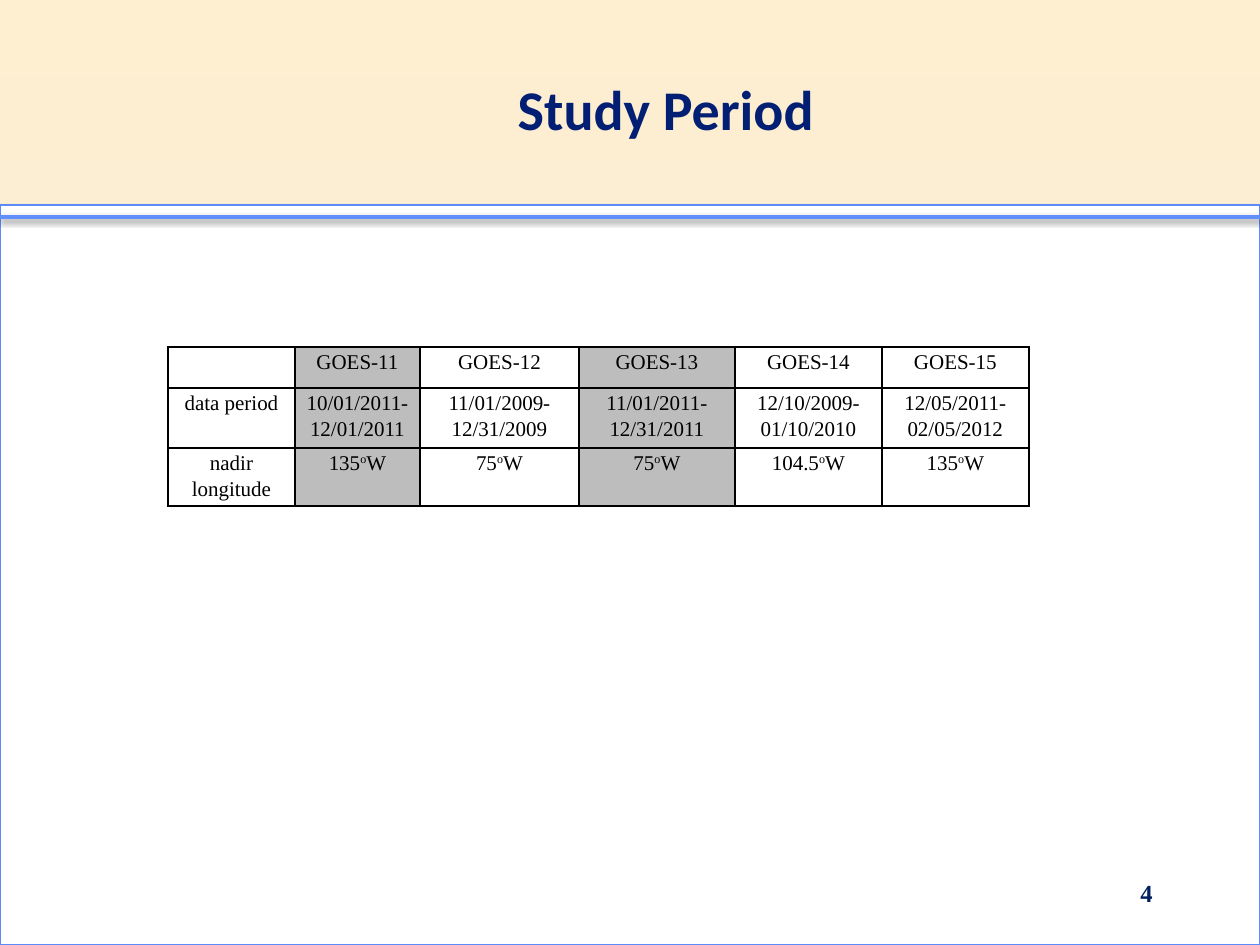
from copy import deepcopy

from lxml.etree import SubElement
from pptx import Presentation
from pptx.dml.color import RGBColor
from pptx.enum.shapes import MSO_CONNECTOR, MSO_SHAPE
from pptx.enum.text import MSO_ANCHOR as ANCHOR, PP_ALIGN as ALIGN
from pptx.oxml import parse_xml
from pptx.oxml.ns import nsdecls, qn
from pptx.util import Pt

PX = 914400 / 126
SERIF = "Times New Roman"
BACKGROUND = [(0, "FFEFD1"), (0.65, "F0EBD5"), (1, "D1C39F")]

# "^" marks the raised degree sign
ROWS = [
    ["", "GOES-11", "GOES-12", "GOES-13", "GOES-14", "GOES-15"],
    ["data period", "10/01/2011-12/01/2011", "11/01/2009-12/31/2009",
     "11/01/2011-12/31/2011", "12/10/2009- 01/10/2010",
     "12/05/2011-02/05/2012"],
    ["nadir longitude", "135^W", "75^W", "75^W", "104.5^W", "135^W"],
]
COL_WIDTHS = [127, 125, 159, 156, 147, 147]
ROW_HEIGHTS = [41, 60, 51]
SHADED_COLS = (1, 3)


def px(n):
    return round(n * PX)


def rgb(value):
    return RGBColor.from_string(value)


def style(font, size, name, color, bold=False):
    font.size, font.name, font.bold = Pt(size), name, bold
    font.color.rgb = rgb(color)


def add_shadow(shape, blur, dist, opacity):
    """Give the shape a black shadow that falls straight down."""
    shape._element.spPr.append(parse_xml(
        f'<a:effectLst {nsdecls("a")}><a:outerShdw blurRad="{Pt(blur)}" '
        f'dist="{Pt(dist)}" dir="5400000" rotWithShape="0">'
        f'<a:srgbClr val="000000"><a:alpha val="{opacity * 1000}"/></a:srgbClr>'
        '</a:outerShdw></a:effectLst>'))


def paint_background(slide):
    fill = slide.background.fill
    fill.gradient()
    fill.gradient_angle = 270
    first = fill.gradient_stops[0]._gs
    first.addnext(deepcopy(first))
    for stop, (position, color) in zip(fill.gradient_stops, BACKGROUND):
        stop.position = position
        stop.color.rgb = rgb(color)


def add_text(slide, text, box, align, anchor, *font):
    tf = slide.shapes.add_textbox(*map(px, box)).text_frame
    tf.word_wrap = True
    tf.vertical_anchor = anchor
    tf.text = text
    p = tf.paragraphs[0]
    p.alignment = align
    style(p.runs[0].font, *font)
    return p


def add_borders(cell):
    tc_pr = cell._tc.get_or_add_tcPr()
    for i, side in enumerate(("lnL", "lnR", "lnT", "lnB")):
        ln = SubElement(tc_pr, qn(f"a:{side}"), w=str(Pt(1)))
        fill = SubElement(ln, qn("a:solidFill"))
        SubElement(fill, qn("a:srgbClr"), val="000000")
        tc_pr.insert(i, ln)


def fill_cell(cell, text, shaded):
    cell.margin_left = cell.margin_right = px(9)
    cell.margin_top = cell.margin_bottom = 0
    if shaded:
        cell.fill.solid()
        cell.fill.fore_color.rgb = rgb("BDBDBD")
    else:
        cell.fill.background()
    add_borders(cell)
    if not text:
        return
    p = cell.text_frame.paragraphs[0]
    p.alignment = ALIGN.CENTER
    p.line_spacing = 1.15
    p.space_after = Pt(10)
    number, mark, unit = text.partition("^")
    for part in (number, mark and "o", unit):
        if part:
            r = p.add_run()
            r.text = part
            style(r.font, 12, SERIF, "000000")
            if part == "o":
                r.font._element.set("baseline", "30000")


def add_data_table(slide, left, top):
    table = slide.shapes.add_table(
        len(ROWS), len(COL_WIDTHS), px(left), px(top),
        px(sum(COL_WIDTHS)), px(sum(ROW_HEIGHTS))).table
    table.first_row = table.horz_banding = False
    for col, width in zip(table.columns, COL_WIDTHS):
        col.width = px(width)
    for i, (row, height) in enumerate(zip(table.rows, ROW_HEIGHTS)):
        row.height = px(height)
        for j, text in enumerate(ROWS[i]):
            fill_cell(table.cell(i, j), text, j in SHADED_COLS)


def main():
    prs = Presentation()
    prs.slide_width, prs.slide_height = px(1260), px(945)
    slide = prs.slides.add_slide(prs.slide_layouts[6])
    paint_background(slide)

    panel = slide.shapes.add_shape(
        MSO_SHAPE.RECTANGLE, 0, px(205), px(1260), px(740))
    panel.fill.solid()
    panel.fill.fore_color.rgb = rgb("FFFFFF")
    panel.line.color.rgb = rgb("5B8AFB")
    panel.line.width = Pt(0.75)
    add_shadow(panel, 3.1, 1.8, 35)

    rule = slide.shapes.add_connector(
        MSO_CONNECTOR.STRAIGHT, 0, px(217), px(1260), px(217))
    rule.line.color.rgb = rgb("618FFD")
    rule.line.width = Pt(2.8)
    add_shadow(rule, 3.1, 1.6, 38)

    title = add_text(slide, "Study Period", (230, 53, 872, 95), ALIGN.CENTER,
                     ANCHOR.BOTTOM, 32, "Calibri", "031F74", True)
    title.line_spacing = 0.85
    add_data_table(slide, 168, 347)
    add_text(slide, "4", (903, 861, 262, 63), ALIGN.RIGHT,
             ANCHOR.MIDDLE, 14, SERIF, "002060", True)
    prs.save("out.pptx")


if __name__ == "__main__":
    main()
